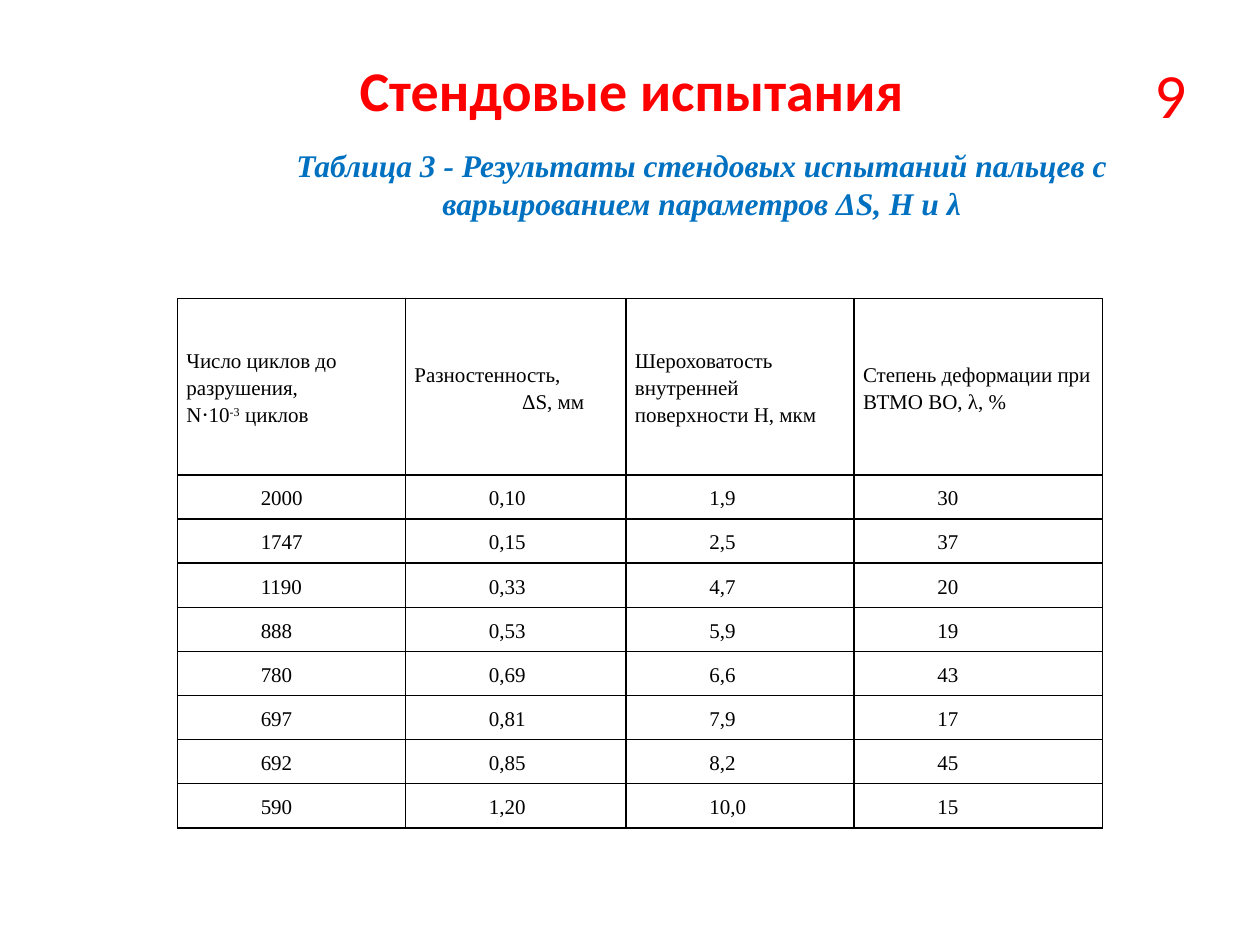
from lxml.etree import SubElement
from pptx import Presentation
from pptx.dml.color import RGBColor
from pptx.enum.shapes import MSO_SHAPE
from pptx.enum.text import MSO_ANCHOR, PP_ALIGN
from pptx.oxml.ns import qn
from pptx.util import Inches, Pt

SERIF = "Times New Roman"
TITLE = "Стендовые испытания"
PAGE = "9"
CAPTION = ["Таблица 3 - Результаты стендовых испытаний пальцев с",
           "варьированием параметров ΔS, H и λ"]
HEADS = [
    ["Число циклов до разрушения,", "N⋅10^-3^ циклов"],
    ["Разностенность,", "ΔS, мм"],
    ["Шероховатость внутренней поверхности Н, мкм"],
    ["Степень деформации при ВТМО ВО, λ, %"],
]
ROWS = [
    ("2000", "0,10", "1,9", "30"),
    ("1747", "0,15", "2,5", "37"),
    ("1190", "0,33", "4,7", "20"),
    ("888", "0,53", "5,9", "19"),
    ("780", "0,69", "6,6", "43"),
    ("697", "0,81", "7,9", "17"),
    ("692", "0,85", "8,2", "45"),
    ("590", "1,20", "10,0", "15"),
]
COLS = [1.81, 1.75, 1.81, 1.97]
HEAD_H, ROW_H = 1.4, 0.35
INDENT = 0.59


def paint(run, size, color, face, bold=False, italic=False):
    font = run.font
    font.size, font.name = Pt(size), face
    font.bold, font.italic = bold, italic
    font.color.rgb = RGBColor.from_string(color)


def indent(para):
    para._p.get_or_add_pPr().set("indent", str(Inches(INDENT)))


def label(slide, text, box, size, bold=False):
    frame = slide.shapes.add_textbox(*map(Inches, box)).text_frame
    frame.word_wrap = False
    para = frame.paragraphs[0]
    para.text = text
    para.alignment = PP_ALIGN.CENTER
    paint(para.runs[0], size, "FF0000", "Calibri", bold)


def caption(slide):
    box = slide.shapes.add_shape(
        MSO_SHAPE.RECTANGLE, *map(Inches, (1.33, 1.09, 7.89, 1.01)))
    box.shadow.inherit = False
    box.fill.solid()
    box.fill.fore_color.rgb = RGBColor.from_string("FFFFFF")
    box.line.fill.background()
    frame = box.text_frame
    frame.word_wrap = True
    frame.vertical_anchor = MSO_ANCHOR.TOP
    frame.margin_top = Inches(0.07)
    frame.text = "\n".join(CAPTION)
    for para in frame.paragraphs:
        para.alignment = PP_ALIGN.CENTER
        indent(para)
        paint(para.runs[0], 18, "0070C0", SERIF, True, True)


def border(cell):
    props = cell._tc.get_or_add_tcPr()
    for i, side in enumerate(("lnL", "lnR", "lnT", "lnB")):
        line = SubElement(props, qn("a:" + side), w=str(Pt(1)))
        fill = SubElement(line, qn("a:solidFill"))
        SubElement(fill, qn("a:srgbClr"), val="000000")
        props.remove(line)
        props.insert(i, line)


def write(cell, lines, number):
    """Fill a cell; text between ^ marks is raised."""
    cell.fill.background()
    border(cell)
    cell.vertical_anchor = MSO_ANCHOR.MIDDLE
    cell.margin_left = cell.margin_right = Inches(0.07)
    cell.margin_top = cell.margin_bottom = 0
    frame = cell.text_frame
    for i, line in enumerate(lines):
        para = frame.paragraphs[0] if i == 0 else frame.add_paragraph()
        para.line_spacing = 1.15
        para.alignment = PP_ALIGN.LEFT
        if number or line.startswith("ΔS"):
            indent(para)
        if line.startswith("ΔS"):
            para.alignment = PP_ALIGN.CENTER
        for j, part in enumerate(line.split("^")):
            run = para.add_run()
            run.text = part
            paint(run, 12, "000000", SERIF)
            if j % 2:
                run.font._element.set("baseline", "30000")


def grid(slide):
    high = HEAD_H + ROW_H * len(ROWS)
    table = slide.shapes.add_table(
        len(ROWS) + 1, len(COLS), Inches(1.41), Inches(2.37),
        Inches(sum(COLS)), Inches(high)).table
    table.first_row = table.horz_banding = False
    for col, width in zip(table.columns, COLS):
        col.width = Inches(width)
    data = [HEADS] + [[[value] for value in row] for row in ROWS]
    for r, row in enumerate(data):
        table.rows[r].height = Inches(ROW_H if r else HEAD_H)
        for c, lines in enumerate(row):
            write(table.cell(r, c), lines, r > 0)


def main():
    deck = Presentation()
    deck.slide_width, deck.slide_height = Inches(10), Inches(7.5)
    slide = deck.slides.add_slide(deck.slide_layouts[6])
    label(slide, TITLE, (2.73, 0.39, 4.57, 0.64), 32, True)
    grid(slide)
    caption(slide)
    label(slide, PAGE, (9.06, 0.39, 0.46, 0.71), 36)
    deck.save("out.pptx")


if __name__ == "__main__":
    main()
